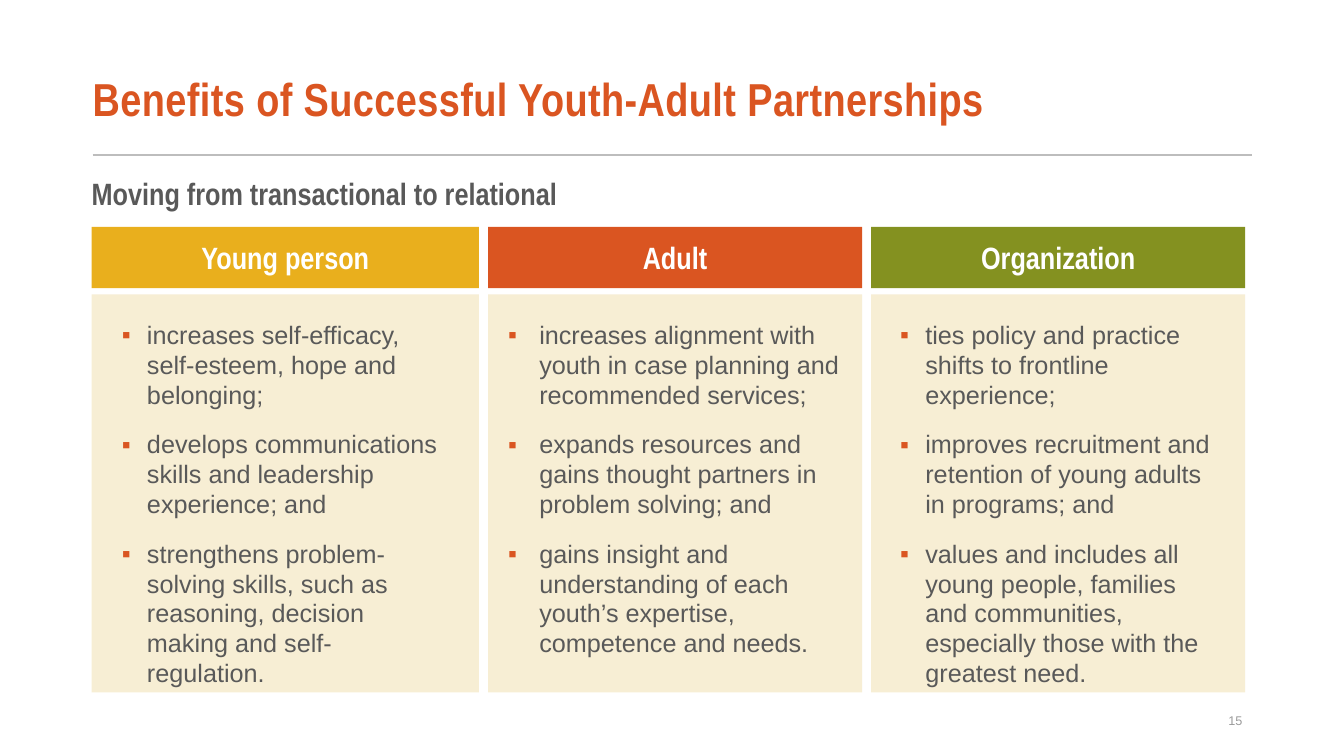
from dataclasses import dataclass

from lxml.etree import SubElement
from pptx import Presentation
from pptx.dml.color import RGBColor
from pptx.enum.shapes import MSO_CONNECTOR, MSO_SHAPE
from pptx.enum.text import MSO_ANCHOR, PP_ALIGN
from pptx.oxml.ns import qn
from pptx.shapes.autoshape import Shape
from pptx.slide import Slide
from pptx.text.text import TextFrame, _Paragraph
from pptx.util import Inches, Pt


@dataclass(frozen=True)
class Theme:
    orange: str = "DA5521"
    gold: str = "E9AF1D"
    green: str = "849120"
    cream: str = "F7EED4"
    white: str = "FFFFFF"
    text: str = "595959"
    number: str = "9B9B9B"
    rule: str = "BDBDBD"
    heading_font: str = "Arial Narrow"
    body_font: str = "Arial"
    title_size: float = 33
    heading_size: float = 22
    body_size: float = 18
    number_size: float = 9


@dataclass(frozen=True)
class Column:
    heading: str
    color: str
    width: float
    margin: float
    indent: float
    benefits: tuple[str, ...]


THEME = Theme()
LEFT, GAP = 0.91, 0.09
COLUMNS = (
    Column("Young person", THEME.gold, 3.84, 0.2, 0.25, (
        "increases self-efficacy, self-esteem, hope and belonging;",
        "develops communications skills and leadership experience; and",
        "strengthens problem-solving skills, such as reasoning, decision making and self-regulation.",
    )),
    Column("Adult", THEME.orange, 3.71, 0.1, 0.31, (
        "increases alignment with youth in case planning and recommended services;",
        "expands resources and gains thought partners in problem solving; and",
        "gains insight and understanding of each youth’s expertise, competence and needs.",
    )),
    Column("Organization", THEME.green, 3.71, 0.19, 0.25, (
        "ties policy and practice shifts to frontline experience;",
        "improves recruitment and retention of young adults in programs; and",
        "values and includes all young people, families and communities, especially those with the greatest need.",
    )),
)


def style(para: _Paragraph, font: str, size: float, color: str, bold: bool = False) -> None:
    """Set the font of a whole paragraph."""
    para.font.name = font
    para.font.size = Pt(size)
    para.font.bold = bold
    para.font.color.rgb = RGBColor.from_string(color)


def add_frame(page: Slide, left: float, top: float, width: float, height: float,
              inset: float = 0.1) -> TextFrame:
    """Add a wrapping text box and return its text frame."""
    frame = page.shapes.add_textbox(Inches(left), Inches(top), Inches(width), Inches(height)).text_frame
    frame.word_wrap = True
    frame.margin_left = Inches(inset)
    return frame


def add_panel(page: Slide, left: float, top: float, width: float, height: float, color: str) -> Shape:
    """Add a plain filled rectangle."""
    panel = page.shapes.add_shape(
        MSO_SHAPE.RECTANGLE, Inches(left), Inches(top), Inches(width), Inches(height))
    panel.shadow.inherit = False
    panel.fill.solid()
    panel.fill.fore_color.rgb = RGBColor.from_string(color)
    panel.line.fill.background()
    return panel


def add_bullet(para: _Paragraph, indent: float) -> None:
    """Give a paragraph a hanging square bullet."""
    properties = para._p.get_or_add_pPr()
    properties.set("marL", str(Inches(indent)))
    properties.set("indent", str(-Inches(indent)))
    color = SubElement(properties, qn("a:buClr"))
    SubElement(color, qn("a:srgbClr")).set("val", THEME.orange)
    SubElement(properties, qn("a:buFont")).set("typeface", THEME.body_font)
    SubElement(properties, qn("a:buChar")).set("char", "▪")


def add_column(page: Slide, column: Column, left: float) -> None:
    """Draw one column: heading, panel and list of benefits."""
    add_panel(page, left, 2.92, column.width, 3.95, THEME.cream)
    header = add_panel(page, left, 2.25, column.width, 0.61, column.color).text_frame
    header.vertical_anchor = MSO_ANCHOR.MIDDLE
    para = header.paragraphs[0]
    para.text = column.heading
    para.alignment = PP_ALIGN.CENTER
    style(para, THEME.heading_font, THEME.heading_size, THEME.white, bold=True)

    frame = add_frame(page, left + column.margin, 3.13, column.width - 2 * column.margin, 3.7)
    for index, benefit in enumerate(column.benefits):
        para = frame.add_paragraph() if index else frame.paragraphs[0]
        para.text = benefit
        add_bullet(para, column.indent)
        para.line_spacing = 0.99
        para.space_before = Pt(14 if index else 0)
        style(para, THEME.body_font, THEME.body_size, THEME.text)


def add_title(page: Slide) -> None:
    """Draw the title, the rule below it and the subtitle."""
    frame = add_frame(page, 0.92, 0.54, 11.5, 0.95, inset=0)
    frame.vertical_anchor = MSO_ANCHOR.MIDDLE
    para = frame.paragraphs[0]
    span = para.add_run()
    span.text = "Benefits of Successful Youth-Adult Partnerships"
    span._r.get_or_add_rPr().set("spc", "30")
    para.line_spacing = 0.87
    style(para, THEME.heading_font, THEME.title_size, THEME.orange, bold=True)

    rule = page.shapes.add_connector(
        MSO_CONNECTOR.STRAIGHT, Inches(0.92), Inches(1.54), Inches(12.42), Inches(1.54))
    rule.line.color.rgb = RGBColor.from_string(THEME.rule)
    rule.line.width = Pt(1.5)
    SubElement(rule._element.spPr, qn("a:effectLst"))

    para = add_frame(page, LEFT, 1.67, 11.5, 0.5, inset=0).paragraphs[0]
    para.text = "Moving from transactional to relational"
    para.line_spacing = 1.05
    style(para, THEME.heading_font, THEME.heading_size, THEME.text, bold=True)


def add_page_number(page: Slide) -> None:
    """Draw the page number at the bottom right."""
    frame = add_frame(page, 9.42, 6.95, 3, 0.4)
    frame.vertical_anchor = MSO_ANCHOR.MIDDLE
    para = frame.paragraphs[0]
    para.text = "15"
    para.alignment = PP_ALIGN.RIGHT
    style(para, THEME.body_font, THEME.number_size, THEME.number)


def main() -> None:
    """Build the slide and save it."""
    deck = Presentation()
    deck.slide_width, deck.slide_height = Inches(13.33), Inches(7.5)
    page = deck.slides.add_slide(deck.slide_layouts[6])
    add_title(page)
    left = LEFT
    for column in COLUMNS:
        add_column(page, column, left)
        left += column.width + GAP
    add_page_number(page)
    deck.save("out.pptx")


if __name__ == "__main__":
    main()
